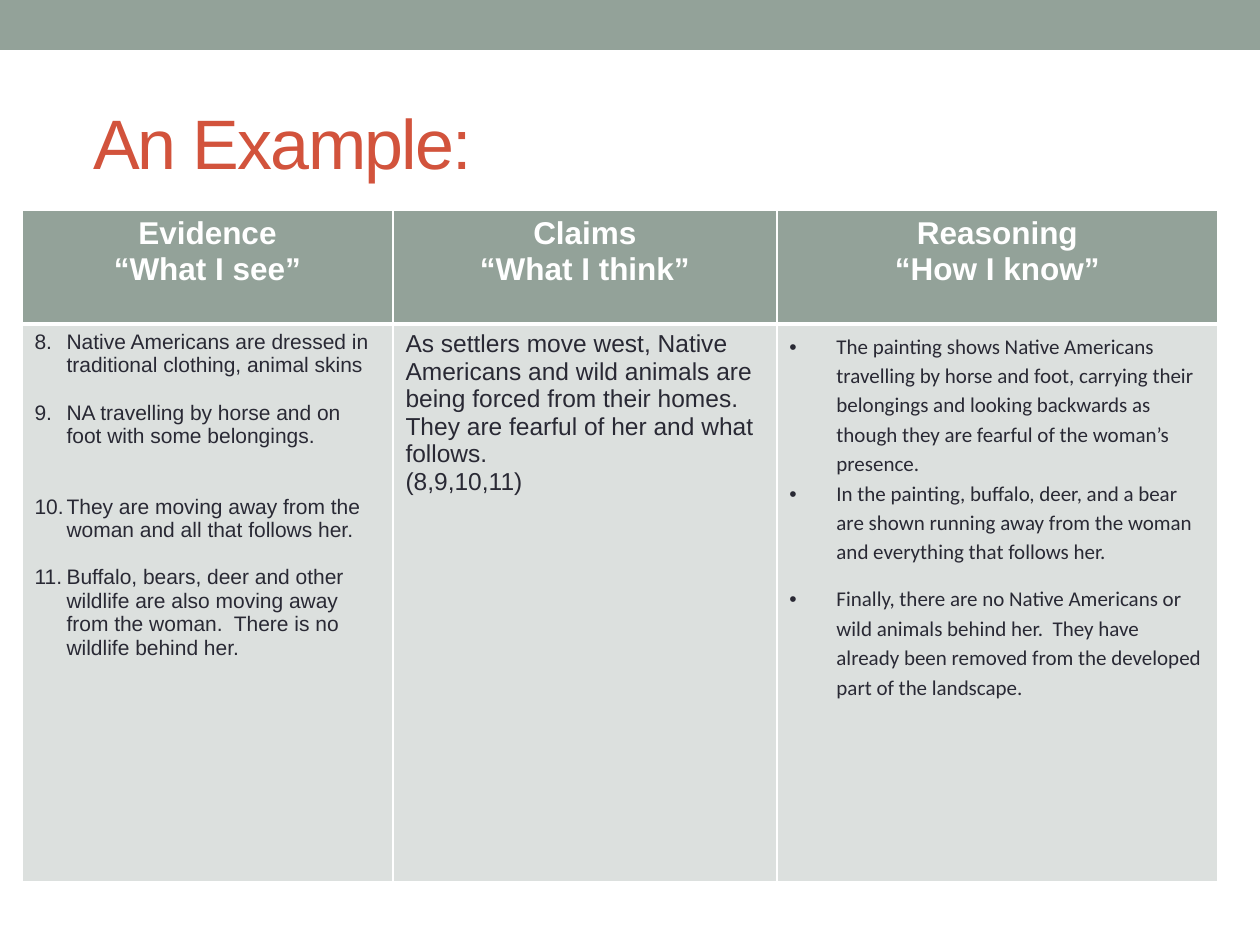
from lxml.etree import SubElement
from pptx import Presentation
from pptx.dml.color import RGBColor
from pptx.enum.shapes import MSO_SHAPE as SHAPE
from pptx.enum.text import MSO_ANCHOR as ANCHOR, PP_ALIGN as ALIGN
from pptx.oxml import parse_xml
from pptx.oxml.ns import nsdecls, qn
from pptx.util import Pt

EMU_PER_PX = 914400 / 126
SAGE = RGBColor(0x93, 0xA2, 0x99)
PALE = RGBColor(0xDC, 0xE0, 0xDE)
RUST = RGBColor(0xD2, 0x53, 0x3C)
INK = RGBColor(0x29, 0x29, 0x34)
WHITE = RGBColor(0xFF, 0xFF, 0xFF)

COLUMNS = [371, 384, 441]
ROWS = [114, 558]
HEADERS = [
    ("Evidence", "“What I see”"),
    ("Claims", "“What I think”"),
    ("Reasoning", "“How I know”"),
]
EVIDENCE = [
    ("Native Americans are dressed in traditional clothing, animal skins", 13.5),
    ("NA travelling by horse and on foot with some belongings.", 27),
    ("They are moving away from the woman and all that follows her.", 13.5),
    ("Buffalo, bears, deer and other wildlife are also moving away from the woman.  "
     "There is no wildlife behind her.", 0),
]
CLAIMS = [
    "As settlers move west, Native Americans and wild animals are being forced from "
    "their homes.  They are fearful of her and what follows.",
    "(8,9,10,11)",
]
REASONING = [
    ("The painting shows Native Americans travelling by horse and foot, carrying their "
     "belongings and looking backwards as though they are fearful of the woman’s presence.", 0),
    ("In the painting, buffalo, deer, and a bear are shown running away from the woman "
     "and everything that follows her.", 10),
    ("Finally, there are no Native Americans or wild animals behind her.  They have "
     "already been removed from the developed part of the landscape.", 10),
]


def px(n):
    return round(n * EMU_PER_PX)


def add_text(tf, text, size=12, font="Arial", color=INK, bold=False,
             align=ALIGN.LEFT, spacing=None, after=0):
    p = tf.paragraphs[0]
    if p.runs:
        p = tf.add_paragraph()
    p.alignment = align
    p.space_after = Pt(after)
    if spacing:
        p.line_spacing = spacing
    r = p.add_run()
    r.text = text
    r.font.size = Pt(size)
    r.font.name = font
    r.font.bold = bold
    r.font.color.rgb = color
    return p


def set_bullet(p, indent, tag, **attrs):
    pPr = p._p.get_or_add_pPr()
    pPr.set("marL", str(px(indent)))
    pPr.set("indent", str(px(-indent)))
    SubElement(pPr, qn("a:buFont"), typeface="Arial")
    SubElement(pPr, qn(tag), **attrs)


def set_borders(cell, left=1, right=1, top=1, bottom=1):
    tcPr = cell._tc.get_or_add_tcPr()
    sides = {"lnL": left, "lnR": right, "lnT": top, "lnB": bottom}
    for i, (side, width) in enumerate(sides.items()):
        tcPr.insert(i, parse_xml(
            f'<a:{side} {nsdecls("a")} w="{Pt(width)}"><a:solidFill>'
            f'<a:srgbClr val="{WHITE}"/></a:solidFill></a:{side}>'))


def fill_cell(cell, color):
    cell.fill.solid()
    cell.fill.fore_color.rgb = color


def add_band(slide, width, height):
    sp = slide.shapes.add_shape(SHAPE.RECTANGLE, 0, 0, width, height)
    sp.shadow.inherit = False
    sp.fill.solid()
    sp.fill.fore_color.rgb = SAGE
    sp.line.fill.background()


def set_title(slide, text):
    sp = slide.shapes.title
    sp.left, sp.top, sp.width, sp.height = px(63), px(73), px(1134), px(136)
    tf = sp.text_frame
    tf.vertical_anchor = ANCHOR.MIDDLE
    tf.margin_left = px(30)
    p = add_text(tf, text, size=40, color=RUST)
    p.runs[0].font._element.set("spc", "-100")


def add_grid(slide):
    table = slide.shapes.add_table(len(ROWS), len(COLUMNS), px(22), px(210),
                                   px(sum(COLUMNS)), px(sum(ROWS))).table
    table.horz_banding = False
    for column, width in zip(table.columns, COLUMNS):
        column.width = px(width)
    for row, height in zip(table.rows, ROWS):
        row.height = px(height)
    for i, lines in enumerate(HEADERS):
        head, body = table.cell(0, i), table.cell(1, i)
        fill_cell(head, SAGE)
        set_borders(head, bottom=3)
        fill_cell(body, PALE)
        set_borders(body, top=3)
        for line in lines:
            add_text(head.text_frame, line, size=18, color=WHITE, bold=True,
                     align=ALIGN.CENTER)
    return table


def fill_body(table):
    evidence, claims, reasoning = (cell.text_frame for cell in table.rows[1].cells)
    for text, after in EVIDENCE:
        p = add_text(evidence, text, after=after)
        set_bullet(p, 32, "a:buAutoNum", type="arabicPeriod", startAt="8")
    for text in CLAIMS:
        add_text(claims, text, size=14)
    for text, after in REASONING:
        p = add_text(reasoning, text, font="Calibri", spacing=1.15, after=after)
        set_bullet(p, 47, "a:buChar", char="•")


def main():
    prs = Presentation()
    prs.slide_width, prs.slide_height = px(1260), px(945)
    slide = prs.slides.add_slide(prs.slide_layouts[5])
    add_band(slide, prs.slide_width, px(50))
    set_title(slide, "An Example:")
    fill_body(add_grid(slide))
    prs.save("out.pptx")


if __name__ == "__main__":
    main()
